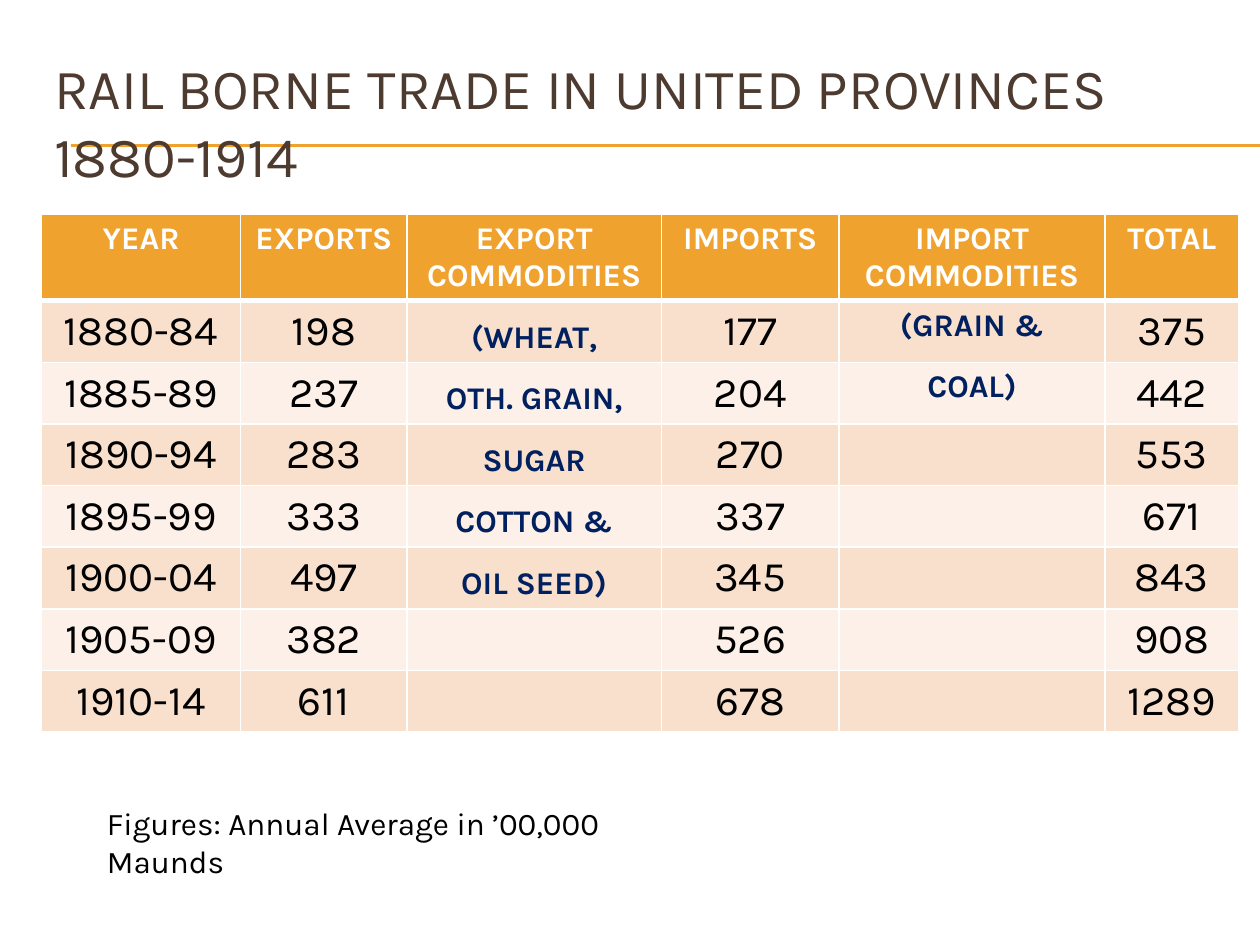
import pptx
import pptx.util
import pptx.dml.color
import pptx.enum.text
import pptx.enum.shapes
import pptx.oxml
import pptx.oxml.ns

FONT = "Karla"
GOLD, WHITE, BLACK, NAVY, BROWN = "F0A22E", "FFFFFF", "000000", "002060", "4E3B30"
BANDS = ("F9E0CD", "FCF0E8")
TITLE = "RAIL BORNE TRADE IN UNITED PROVINCES 1880-1914"
NOTE = "Figures: Annual Average in ’00,000 Maunds"
HEAD = ("YEAR", "EXPORTS", "EXPORT COMMODITIES", "IMPORTS", "IMPORT COMMODITIES", "TOTAL")
ROWS = [
    ("1880-84", "198", "(WHEAT,", "177", "(GRAIN &", "375"),
    ("1885-89", "237", "OTH. GRAIN,", "204", "COAL)", "442"),
    ("1890-94", "283", "SUGAR", "270", "", "553"),
    ("1895-99", "333", "COTTON &", "337", "", "671"),
    ("1900-04", "497", "OIL SEED)", "345", "", "843"),
    ("1905-09", "382", "", "526", "", "908"),
    ("1910-14", "611", "", "678", "", "1289"),
]
COLS = (1.58, 1.32, 2.02, 1.41, 2.11, 1.06)
GOODS = (2, 4)
LEFT, WIDE, HIGH = 0.33, 9.5, 0.41

Inch, Pt = pptx.util.Inches, pptx.util.Pt
Anchor = pptx.enum.text.MSO_ANCHOR
Align = pptx.enum.text.PP_ALIGN
Fit = pptx.enum.text.MSO_AUTO_SIZE


def paint(code):
    return pptx.dml.color.RGBColor.from_string(code)


def write(frame, text, size, code, bold=False, align=Align.LEFT):
    para = frame.paragraphs[0]
    para.alignment = align
    run = para.add_run()
    run.text = text
    font = run.font
    font.name, font.size, font.bold = FONT, Pt(size), bold
    font.color.rgb = paint(code)


def place(shape, left, top, wide, high):
    shape.left, shape.top = Inch(left), Inch(top)
    shape.width, shape.height = Inch(wide), Inch(high)


def edge(cell, side, width):
    space = pptx.oxml.ns.nsdecls("a")
    cell._tc.get_or_add_tcPr().append(pptx.oxml.parse_xml(
        f'<a:ln{side} {space} w="{Pt(width)}"><a:solidFill>'
        f'<a:srgbClr val="{WHITE}"/></a:solidFill></a:ln{side}>'))


def rule(slide, high):
    line = slide.shapes.add_connector(
        pptx.enum.shapes.MSO_CONNECTOR.STRAIGHT,
        Inch(0.56), Inch(high), Inch(10), Inch(high))
    line.line.color.rgb = paint(GOLD)
    line.line.width = Pt(0.75)
    line.element.spPr.append(pptx.oxml.parse_xml(
        f'<a:effectLst {pptx.oxml.ns.nsdecls("a")}/>'))
    return line


def fill(cell, row, col, text):
    for side in "LRTB":
        thick = (row, side) in ((0, "B"), (1, "T"))
        edge(cell, side, 3 if thick else 1)
    cell.fill.solid()
    cell.fill.fore_color.rgb = paint(BANDS[(row - 1) % 2] if row else GOLD)
    cell.margin_left = cell.margin_right = Inch(0.11)
    cell.margin_top = cell.margin_bottom = Inch(0.05)
    if row and col == GOODS[0]:
        cell.vertical_anchor = Anchor.BOTTOM
    if not text:
        return
    if not row:
        style = (18, WHITE, True)
    elif col in GOODS:
        style = (18, NAVY, True)
    else:
        style = (24, BLACK, False)
    write(cell.text_frame, text, *style, Align.CENTER)


def main():
    deck = pptx.Presentation()
    deck.slide_width, deck.slide_height = Inch(10), Inch(7.5)
    slide = deck.slides.add_slide(deck.slide_layouts[5])

    title = slide.shapes.title
    place(title, LEFT, 0.5, WIDE, 0.92)
    title.text_frame.vertical_anchor = Anchor.MIDDLE
    title.text_frame.auto_size = Fit.NONE
    write(title.text_frame, TITLE, 32.4, BROWN)
    for high in (1.15, 1.16):
        title.element.addprevious(rule(slide, high).element)

    data = [HEAD] + ROWS
    grid = slide.shapes.add_table(
        len(data), len(COLS), Inch(LEFT), Inch(1.7),
        Inch(WIDE), Inch(HIGH * len(data))).table
    for col, wide in enumerate(COLS):
        grid.columns[col].width = Inch(wide)
    for row, texts in enumerate(data):
        grid.rows[row].height = Inch(HIGH)
        for col, text in enumerate(texts):
            fill(grid.cell(row, col), row, col, text)

    note = slide.shapes.add_textbox(Inch(0.75), Inch(6.33), Inch(4.64), Inch(0.4))
    note.text_frame.word_wrap = True
    write(note.text_frame, NOTE, 18, BLACK)

    deck.save("out.pptx")


if __name__ == "__main__":
    main()
